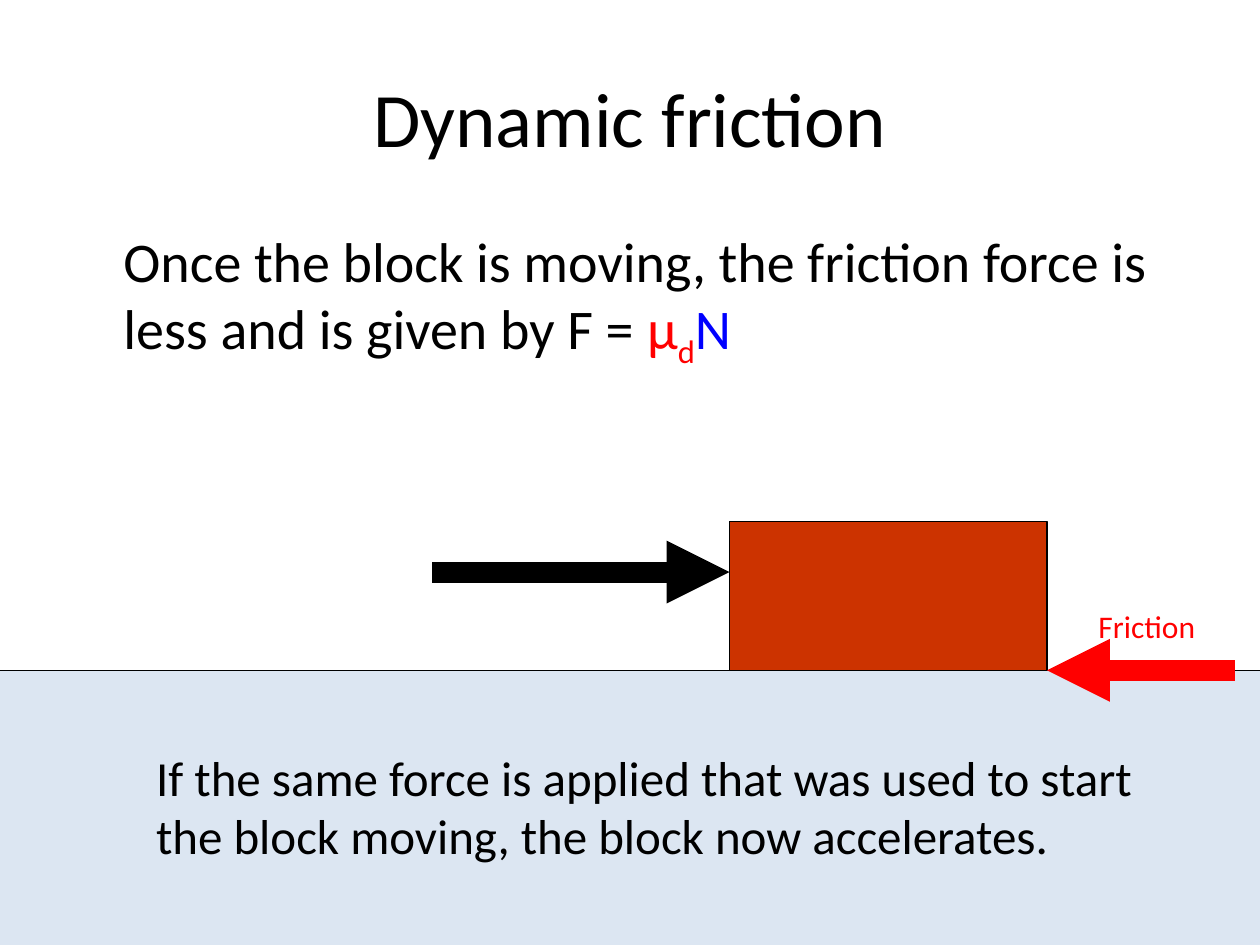
from lxml.etree import SubElement
from pptx import Presentation
from pptx.dml.color import RGBColor
from pptx.enum.shapes import MSO_CONNECTOR, MSO_SHAPE
from pptx.enum.text import MSO_ANCHOR, PP_ALIGN
from pptx.oxml.ns import qn
from pptx.util import Inches, Pt

BLACK, RED, BLUE = "000000", "FF0000", "0000FF"
GROUND, BLOCK = "DCE6F2", "CC3300"
GROUND_TOP = 5.32
BLOCK_LEFT, BLOCK_TOP, BLOCK_WIDTH = 5.79, 4.14, 2.52
BLOCK_RIGHT = BLOCK_LEFT + BLOCK_WIDTH
PUSH_HEIGHT = 4.54


def color(value):
    return RGBColor.from_string(value)


def apply(target, formats):
    for name, value in formats.items():
        setattr(target, name, value)


class FrictionSlide:
    """Draws text, rectangles and force arrows on one page in a shared style."""

    def __init__(self, page, font="Calibri", outline=0.75, force=12):
        self.page = page
        self.font = font
        self.outline = outline
        self.force = force

    def text(self, bounds, size, spans, align=PP_ALIGN.LEFT, **frame_format):
        box = self.page.shapes.add_textbox(*map(Inches, bounds))
        frame = box.text_frame
        apply(frame, {"word_wrap": True, **frame_format})
        para = frame.paragraphs[0]
        para.alignment = align
        for words, shade, baseline in spans:
            span = para.add_run()
            span.text = words
            apply(span.font, {"name": self.font, "size": Pt(size)})
            span.font.color.rgb = color(shade)
            if baseline:
                span._r.get_or_add_rPr().set("baseline", str(baseline * 1000))

    def rectangle(self, bounds, fill):
        box = self.page.shapes.add_shape(MSO_SHAPE.RECTANGLE, *map(Inches, bounds))
        box.shadow.inherit = False
        box.fill.solid()
        box.fill.fore_color.rgb = color(fill)
        box.line.color.rgb = color(BLACK)
        box.line.width = Pt(self.outline)

    def arrow(self, start, end, shade):
        arrow = self.page.shapes.add_connector(
            MSO_CONNECTOR.STRAIGHT, *map(Inches, (*start, *end)))
        arrow.line.color.rgb = color(shade)
        arrow.line.width = Pt(self.force)
        SubElement(arrow.line._get_or_add_ln(), qn("a:tailEnd"), type="triangle")
        SubElement(arrow._element.spPr, qn("a:effectLst"))


def main():
    deck = Presentation()
    deck.slide_width, deck.slide_height = Inches(10), Inches(7.5)
    slide = FrictionSlide(deck.slides.add_slide(deck.slide_layouts[6]))

    slide.text((0.5, 0.3, 9, 1.25), 44, [("Dynamic friction", BLACK, 0)],
               align=PP_ALIGN.CENTER, vertical_anchor=MSO_ANCHOR.MIDDLE)
    slide.text((0.5, 1.75, 9, 4.95), 32, [
        ("Once the block is moving, the friction force is less and is given by F = ", BLACK, 0),
        ("μ", RED, 0),
        ("d", RED, -25),
        ("N", BLUE, 0),
    ], margin_left=Inches(0.48))

    slide.rectangle((-0.2, GROUND_TOP, 10.4, 2.28), GROUND)
    slide.rectangle((BLOCK_LEFT, BLOCK_TOP, BLOCK_WIDTH, GROUND_TOP - BLOCK_TOP), BLOCK)
    slide.arrow((3.43, PUSH_HEIGHT), (BLOCK_LEFT, PUSH_HEIGHT), BLACK)
    slide.arrow((9.8, GROUND_TOP), (BLOCK_RIGHT, GROUND_TOP), RED)

    slide.text((8.62, 4.77, 1.73, 0.4), 18, [("Friction", RED, 0)])
    slide.text((1.14, 5.88, 8.19, 1.5), 28, [
        ("If the same force is applied that was used to start the block moving, "
         "the block now accelerates.", BLACK, 0),
    ])
    deck.save("out.pptx")


if __name__ == "__main__":
    main()
